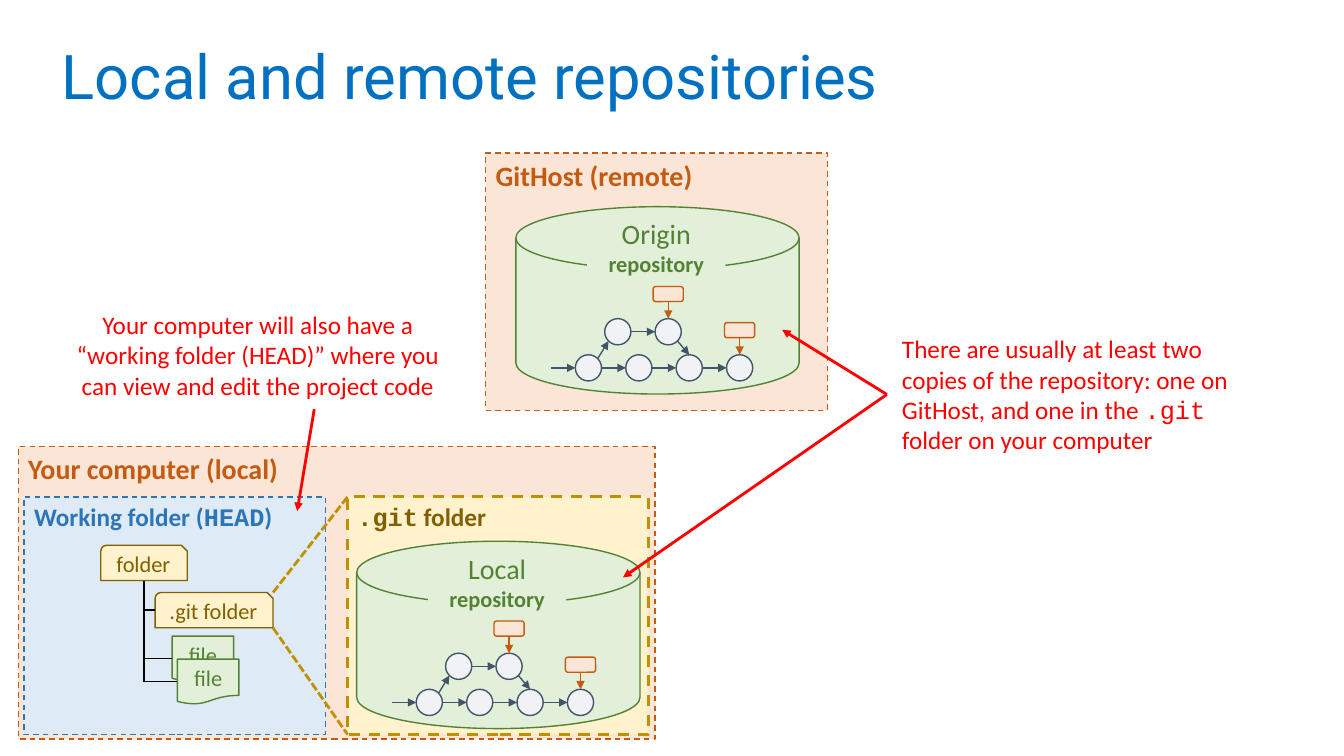
from collections import namedtuple
from math import sqrt

from lxml.etree import SubElement
from pptx import Presentation
from pptx.dml.color import RGBColor
from pptx.enum.dml import MSO_LINE
from pptx.enum.shapes import MSO_CONNECTOR, MSO_SHAPE
from pptx.enum.text import MSO_ANCHOR, MSO_AUTO_SIZE, PP_ALIGN
from pptx.oxml.ns import qn
from pptx.util import Cm, Pt

SANS, MONO = "Calibri", "Courier New"
ORANGE, PEACH = "C55A11", "FBE5D6"
GREEN, MINT = "548235", "E2F0D9"
OLIVE, GOLD, CREAM = "806000", "BF9000", "FFF2CC"
BLUE, SKY = "2E75B6", "DEEBF7"
SLATE, MIST = "44546A", "F0F2F6"
RED, BLACK, TITLE_BLUE = "FF0000", "000000", "0070C0"

# Lengths in centimetres
Box = namedtuple("Box", "x y w h")


def inside(box, dx, dy, w, h):
    return Box(box.x + dx, box.y + dy, w, h)


def rgb(value):
    return RGBColor.from_string(value)


def add_run(paragraph, text, size, colour, font=SANS, bold=False):
    run = paragraph.add_run()
    run.text = text
    run.font.name, run.font.size, run.font.bold = font, Pt(size), bold
    run.font.color.rgb = rgb(colour)


def add_figure(slide, kind, box, fill=None, outline=None, width=1, dash=None):
    figure = slide.shapes.add_shape(kind, *[Cm(length) for length in box])
    figure.shadow.inherit = False
    if fill:
        figure.fill.solid()
        figure.fill.fore_color.rgb = rgb(fill)
    else:
        figure.fill.background()
    if outline:
        figure.line.color.rgb = rgb(outline)
        figure.line.width = Pt(width)
        if dash:
            figure.line.dash_style = dash
    else:
        figure.line.fill.background()
    return figure


def write(figure, paragraphs, size, colour, align=PP_ALIGN.LEFT, anchor=MSO_ANCHOR.TOP):
    """Each paragraph is a list of (text, font, bold[, size]) runs."""
    frame = figure.text_frame
    frame.word_wrap = True
    frame.vertical_anchor = anchor
    for index, runs in enumerate(paragraphs):
        paragraph = frame.add_paragraph() if index else frame.paragraphs[0]
        paragraph.alignment = align
        for text, font, bold, *own_size in runs:
            add_run(paragraph, text, own_size[0] if own_size else size, colour, font, bold)


def add_line(slide, start, end, colour, width=1, dash=None, arrow=False):
    line = slide.shapes.add_connector(
        MSO_CONNECTOR.STRAIGHT, *[Cm(length) for length in (*start, *end)])
    line.line.color.rgb = rgb(colour)
    line.line.width = Pt(width)
    if dash:
        line.line.dash_style = dash
    if arrow:
        SubElement(line.line._get_or_add_ln(), qn("a:tailEnd"), type="triangle")
    SubElement(line._element.spPr, qn("a:effectLst"))
    return line


def add_area(slide, box, runs, size, colour, fill, outline, width=1):
    area = add_figure(slide, MSO_SHAPE.RECTANGLE, box, fill, outline, width, MSO_LINE.DASH)
    write(area, [runs], size, colour)


def add_title(slide, box):
    title = slide.shapes.title
    title.left, title.top, title.width, title.height = [Cm(length) for length in box]
    title.text_frame.vertical_anchor = MSO_ANCHOR.MIDDLE
    heading = title.text_frame.paragraphs[0]
    heading.alignment = PP_ALIGN.LEFT
    heading.line_spacing = 0.9
    add_run(heading, "Local and remote repositories", 44, TITLE_BLUE, "Roboto")


def add_history(slide, box):
    """Commit graph: a main row, a branch above it and two branch labels."""
    size, step = 0.66, 1.27
    radius = size / 2
    diagonal = radius / sqrt(2)
    main = [(box.x + 1.83 + i * step, box.y + 4.06) for i in range(4)]
    branch = [(box.x + 2.57 + i * step, box.y + 3.15) for i in range(2)]

    for x, y in main + branch:
        add_figure(slide, MSO_SHAPE.OVAL, Box(x - radius, y - radius, size, size), MIST, SLATE)

    # Arrows between commits
    before_main = (main[0][0] - step, main[0][1])
    rows = [before_main] + main
    for (x1, y1), (x2, y2) in [*zip(rows, rows[1:]), tuple(branch)]:
        add_line(slide, (x1 + radius, y1), (x2 - radius, y2), SLATE, arrow=True)
    add_line(slide, (main[0][0] + diagonal, main[0][1] - diagonal),
             (branch[0][0] - diagonal, branch[0][1] + diagonal), SLATE, arrow=True)
    add_line(slide, (branch[1][0] + diagonal, branch[1][1] + diagonal),
             (main[2][0], main[2][1] - radius), SLATE, arrow=True)

    # Labels pointing at the newest commits
    for x, y in (main[-1], branch[-1]):
        top = y - radius
        label = add_figure(slide, MSO_SHAPE.ROUNDED_RECTANGLE,
                           Box(x - 0.38, top - 0.81, 0.76, 0.38), PEACH, ORANGE)
        pointer = add_line(slide, (x, top - 0.43), (x, top), ORANGE, arrow=True)
        pointer.begin_connect(label, 2)


def add_repository(slide, box, name):
    add_figure(slide, MSO_SHAPE.FLOWCHART_MAGNETIC_DISK, box, MINT, GREEN)
    caption = add_figure(slide, MSO_SHAPE.RECTANGLE, inside(box, 1.8, 0.13, 3.48, 1.8), MINT)
    write(caption, [[(name, SANS, False)], [("repository", SANS, True, 16)]],
          20, GREEN, PP_ALIGN.CENTER)
    add_history(slide, box)


def add_remote(slide, box):
    add_area(slide, box, [("GitHost (remote)", SANS, True)], 20, ORANGE, PEACH, ORANGE)
    add_repository(slide, inside(box, 0.76, 1.35, 7.14, 4.72), "Origin")


def add_working_folder(slide, box):
    """Draws the folder tree and returns the box of its .git folder."""
    add_area(slide, box, [("Working folder (", SANS, True), ("HEAD", MONO, True),
                          (")", SANS, True)], 18, BLUE, SKY, BLUE)
    folder = inside(box, 1.93, 1.22, 2.18, 0.89)
    git_folder = inside(box, 3.3, 2.41, 2.97, 0.89)
    files = [inside(box, 3.73, 3.51, 1.55, 1.14), inside(box, 3.86, 4.09, 1.55, 1.14)]
    for part, name in ((folder, "folder"), (git_folder, ".git folder")):
        figure = add_figure(slide, MSO_SHAPE.SNIP_ROUND_RECTANGLE, part, CREAM, OLIVE)
        write(figure, [[(name, SANS, False)]], 16, OLIVE, PP_ALIGN.CENTER, MSO_ANCHOR.MIDDLE)
        figure.text_frame.word_wrap = False
    for part in files:
        figure = add_figure(slide, MSO_SHAPE.FLOWCHART_DOCUMENT, part, MINT, GREEN)
        write(figure, [[("file", SANS, False)]], 16, GREEN, PP_ALIGN.CENTER)

    # Trunk and twigs of the tree
    trunk = folder.x + folder.w / 2
    add_line(slide, (trunk, folder.y + folder.h),
             (trunk, files[-1].y + files[-1].h / 2), BLACK)
    for part in (git_folder, *files):
        middle = part.y + part.h / 2
        add_line(slide, (trunk, middle), (part.x, middle), BLACK)
    return git_folder


def add_computer(slide, box):
    add_area(slide, box, [("Your computer (local)", SANS, True)], 20, ORANGE, PEACH, ORANGE)
    git = inside(box, 8.3, 1.27, 7.59, 5.99)
    add_area(slide, git, [(".git", MONO, True), (" folder", SANS, True)],
             18, OLIVE, CREAM, GOLD, 2)
    git_folder = add_working_folder(slide, inside(box, 0.15, 1.27, 7.59, 5.99))
    add_repository(slide, inside(git, 0.23, 1.12, 7.14, 4.72), "Local")

    # Zoom from the small .git folder to the large one
    for small, large in ((git_folder.y, git.y), (git_folder.y + git_folder.h, git.y + git.h)):
        add_line(slide, (git_folder.x + git_folder.w, small), (git.x, large),
                 GOLD, 2, MSO_LINE.SQUARE_DOT)


def add_note(slide, box, runs, align):
    note = add_figure(slide, MSO_SHAPE.ROUNDED_RECTANGLE, box)
    note.adjustments[0] = 0.126
    write(note, [runs], 18, RED, align)
    note.text_frame.auto_size = MSO_AUTO_SIZE.SHAPE_TO_FIT_TEXT
    return note


def add_copies_note(slide, box):
    note = add_note(slide, box, [
        ("There are usually at least two copies of the repository: one on GitHost, "
         "and one in the ", SANS, False),
        (".git", MONO, False), (" folder on your computer", SANS, False)], PP_ALIGN.LEFT)
    for dx, dy in ((-2.64, 0.16), (-6.65, 6.4)):
        arrow = add_line(slide, (box.x, box.y + box.h / 2), (box.x + dx, box.y + dy),
                         RED, 2, arrow=True)
        arrow.begin_connect(note, 1)


def add_working_note(slide, box):
    add_note(slide, box, [("Your computer will also have a “working folder (HEAD)” where you "
                           "can view and edit the project code", SANS, False)], PP_ALIGN.CENTER)
    add_line(slide, (box.x + 6.45, box.y + 2.74), (box.x + 6.02, box.y + 5.31),
             RED, 2, arrow=True)


def main():
    deck = Presentation()
    deck.slide_width, deck.slide_height = Cm(33.87), Cm(19.05)
    slide = deck.slides.add_slide(deck.slide_layouts[5])
    add_title(slide, Box(1.3, 0.56, 26.67, 2.87))
    add_remote(slide, Box(12.24, 3.86, 8.61, 6.48))
    add_computer(slide, Box(0.46, 11.25, 16.05, 7.37))
    add_copies_note(slide, Box(22.35, 8.15, 9.32, 3.58))
    add_working_note(slide, Box(1.47, 7.57, 10.06, 2.77))
    deck.save("out.pptx")


if __name__ == "__main__":
    main()
